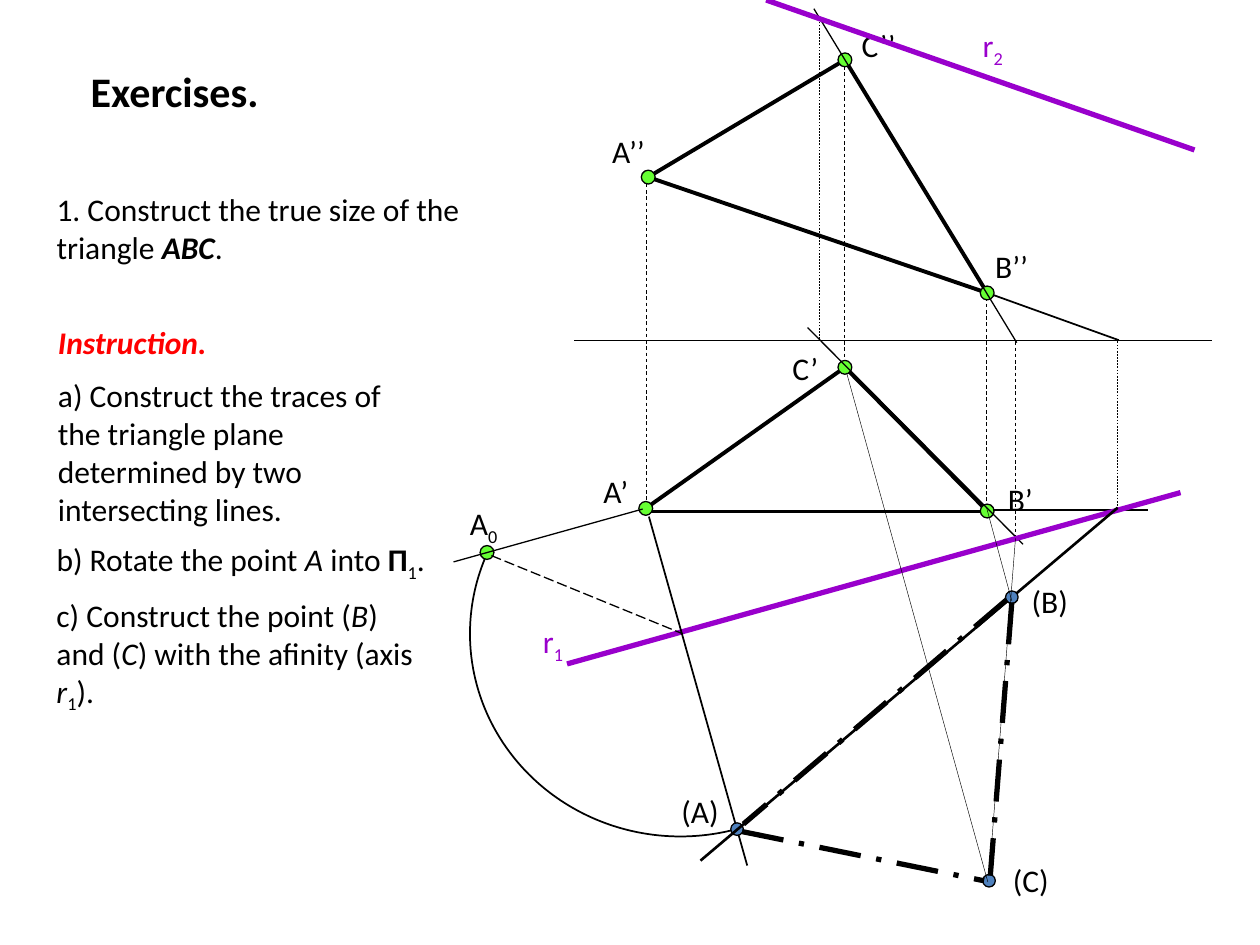
"""Build the exercise slide on the true size of triangle ABC."""
from dataclasses import dataclass

import lxml.etree
import pptx
import pptx.dml.color
import pptx.enum.dml
import pptx.enum.shapes
import pptx.enum.text
import pptx.oxml.ns
import pptx.util

Pt = pptx.util.Pt
Dash = pptx.enum.dml.MSO_LINE
Point = tuple[float, float]
Box = tuple[float, float, float, float]
BLACK, RED, PURPLE, GREEN, BLUE = "000000", "FF0000", "9900CC", "66FF33", "4F81BD"


@dataclass
class Span:
    text: str
    bold: bool = False
    italic: bool = False
    subscript: bool = False
    color: str = BLACK


@dataclass
class Line:
    start: Point
    end: Point
    width: float = 0.75
    dash: Dash | None = None
    color: str = BLACK


@dataclass
class Dot:
    center: Point
    color: str = GREEN
    size: float = 7.9


@dataclass
class Arc:
    box: Box
    start: float
    end: float


@dataclass
class Label:
    box: Box
    spans: list[Span]


A2, B2, C2 = (370.4, 101.2), (564.1, 167.4), (482.8, 34.2)
A1, B1, C1 = (369, 290.5), (564.1, 292), (482.8, 209.9)
A0 = (278.3, 315.7)
A, B, C = (421.2, 473.8), (578.2, 341.3), (565.2, 503.3)
TRACE_AB, TRACE_BC = (638.6, 291.4), (580.3, 307.6)


def label(left: float, top: float, width: float, text: str,
          subscript: str = "", color: str = BLACK) -> Label:
    spans = [Span(text, color=color)]
    if subscript:
        spans.append(Span(subscript, subscript=True, color=color))
    return Label((left, top, width, 28.8 if color == PURPLE else 26.6), spans)


DRAWING = [
    Line((328.3, 194.4), (692.6, 194.4)),
    Line(C2, A2, 2.25), Line(A2, B2, 2.25), Line(C2, B2, 2.25),
    Line((370.8, 292.3), (564.5, 292.3), 2.25),
    Line(C1, A1, 2.25), Line(C1, B1, 2.25),
    Line((369.4, 101.5), (369.4, 290.2), 0.5, Dash.DASH),
    Line(C2, C1, 0.5, Dash.DASH),
    Line((563.8, 170), (563.8, 288.7), 0.5, Dash.DASH),
    *[Dot(center) for center in (C2, B1, A1, A2, B2, C1)],
    label(337.7, 266.4, 33.1, "A’"),
    label(568.8, 270.7, 35.3, "B’"),
    label(445.7, 195.8, 31, "C’"),
    label(561.6, 137.5, 38.2, "B’’"),
    label(342.7, 72, 41, "A’’"),
    label(485.3, 11.5, 43.2, "C’’"),
    Line((465.1, 5), (581, 195.8)),
    Line((461.5, 187.2), (584.6, 311)),
    Line((468, 193.7), (468, 10.1), 0.25, Dash.DASH),
    Line((580.3, 195.1), TRACE_BC, 0.5, Dash.DASH),
    Line((567.4, 168.5), (639.4, 194.4), 1),
    Line((567.4, 291.6), (655.9, 291.6), 1),
    Line((638.6, 195.1), TRACE_AB, 0.25, Dash.DASH),
    Line((674.6, 281.5), (324, 379.4), 3, color=PURPLE),
    label(303.1, 352.1, 37.4, "r", "1", PURPLE),
    Line((437.8, 0), (682.6, 85.7), 3, color=PURPLE),
    label(554.4, 11.5, 36, "r", "2", PURPLE),
    Line((427, 494.6), (370.8, 295.2), 1),
    Dot(A0),
    Line((259.2, 321.1), (367.2, 290.9)),
    label(261.4, 284.4, 36, "A", "0"),
    Line((280.8, 317.5), (390.2, 362.2), 0.75, Dash.LONG_DASH),
    Arc((268.6, 246.2, 240.5, 231.8), 74, 201),
    Dot(A, BLUE, 7.2),
    label(382.3, 449.3, 41, "(A)"),
    Line((638.6, 290.2), (400.3, 491.8), 1.5),
    Dot(B, BLUE, 7.2),
    Line((578.2, 343.4), (563.8, 290.2), 0.25),
    label(582.5, 329, 46.1, "(B)"),
    Line(TRACE_BC, (565.2, 500.4), 0.25),
    Dot(C, BLUE, 7.2),
    Line((564.5, 504), (483.8, 213.1), 0.25),
    label(571.7, 488.2, 38.2, "(C)"),
    Line((424.1, 475.2), (562.3, 503.3), 3, Dash.LONG_DASH_DOT),
    Line((575.3, 342.7), (424.8, 470.9), 3, Dash.LONG_DASH_DOT),
    Line((578.2, 344.2), (565.9, 500.4), 3, Dash.LONG_DASH_DOT),
]

TITLE_BOX = (44.6, 33.8, 218.2, 43.2)
INSTRUCTION_BOX = (25.9, 180.7, 208.8, 127.4)
INSTRUCTION = [
    [Span("Instruction.", bold=True, italic=True, color=RED)],
    [Span("a) Construct the traces of the triangle plane determined by "
          "two intersecting lines.")],
]
STEPS = [
    Label((25.2, 105.1, 267.1, 50.4), [
        Span("1. Construct the true size of the triangle "),
        Span("ABC", bold=True, italic=True), Span(".")]),
    Label((25.2, 305.3, 229.7, 28.8), [
        Span("b) Rotate the point "), Span("A ", italic=True), Span("into "),
        Span("Π", bold=True), Span("1", subscript=True), Span(".")]),
    Label((25.2, 337, 220.3, 72.7), [
        Span("c) Construct the point ("), Span("B", italic=True),
        Span(") and ("), Span("C", italic=True),
        Span(") with the afinity (axis "), Span("r", italic=True),
        Span("1", subscript=True), Span(").")]),
]


def rgb(color: str) -> pptx.dml.color.RGBColor:
    return pptx.dml.color.RGBColor.from_string(color)


def write(shape, box: Box, paragraphs: list[list[Span]], size: float = 18) -> None:
    shape.left, shape.top, shape.width, shape.height = map(Pt, box)
    frame = shape.text_frame
    frame.word_wrap = True
    frame.auto_size = pptx.enum.text.MSO_AUTO_SIZE.NONE
    frame.vertical_anchor = pptx.enum.text.MSO_ANCHOR.TOP
    for index, spans in enumerate(paragraphs):
        para = frame.add_paragraph() if index else frame.paragraphs[0]
        para.alignment = pptx.enum.text.PP_ALIGN.LEFT
        para.space_before = Pt(9 if index else 0)
        properties = para._p.get_or_add_pPr()
        properties.set("marL", "0")
        properties.set("indent", "0")
        lxml.etree.SubElement(properties, pptx.oxml.ns.qn("a:buNone"))
        for span in spans:
            run = para.add_run()
            run.text = span.text
            run.font.name, run.font.size = "Calibri", Pt(size)
            run.font.bold, run.font.italic = span.bold, span.italic
            run.font.color.rgb = rgb(span.color)
            if span.subscript:
                run._r.get_or_add_rPr().set("baseline", "-25000")


def draw_label(page, item: Label) -> None:
    write(page.shapes.add_textbox(*map(Pt, item.box)), item.box, [item.spans])


def draw_line(page, item: Line) -> None:
    line = page.shapes.add_connector(
        pptx.enum.shapes.MSO_CONNECTOR.STRAIGHT, *map(Pt, item.start + item.end))
    line.line.color.rgb = rgb(item.color)
    line.line.width = Pt(item.width)
    if item.dash is not None:
        line.line.dash_style = item.dash
    lxml.etree.SubElement(line._element.spPr, pptx.oxml.ns.qn("a:effectLst"))


def draw_dot(page, item: Dot) -> None:
    left, top = (value - item.size / 2 for value in item.center)
    dot = page.shapes.add_shape(pptx.enum.shapes.MSO_SHAPE.OVAL,
                                *map(Pt, (left, top, item.size, item.size)))
    dot.shadow.inherit = False
    dot.fill.solid()
    dot.fill.fore_color.rgb = rgb(item.color)
    dot.line.color.rgb = rgb(BLACK)
    dot.line.width = Pt(0.75)


def draw_arc(page, item: Arc) -> None:
    arc = page.shapes.add_shape(pptx.enum.shapes.MSO_SHAPE.ARC, *map(Pt, item.box))
    arc.adjustments[0] = item.start * 0.6
    arc.adjustments[1] = (item.end - 360) * 0.6 if item.end > 360 else item.end * 0.6
    arc.shadow.inherit = False
    arc.fill.background()
    arc.line.color.rgb = rgb(BLACK)
    arc.line.width = Pt(1)


def main() -> None:
    deck = pptx.Presentation()
    deck.slide_width, deck.slide_height = Pt(720), Pt(540)
    page = deck.slides.add_slide(deck.slide_layouts[1])
    write(page.shapes.title, TITLE_BOX, [[Span("Exercises.", bold=True)]], 24)
    write(page.placeholders[1], INSTRUCTION_BOX, INSTRUCTION)
    painters = {Line: draw_line, Dot: draw_dot, Arc: draw_arc, Label: draw_label}
    for item in STEPS + DRAWING:
        painters[type(item)](page, item)
    deck.save("out.pptx")


if __name__ == "__main__":
    main()
